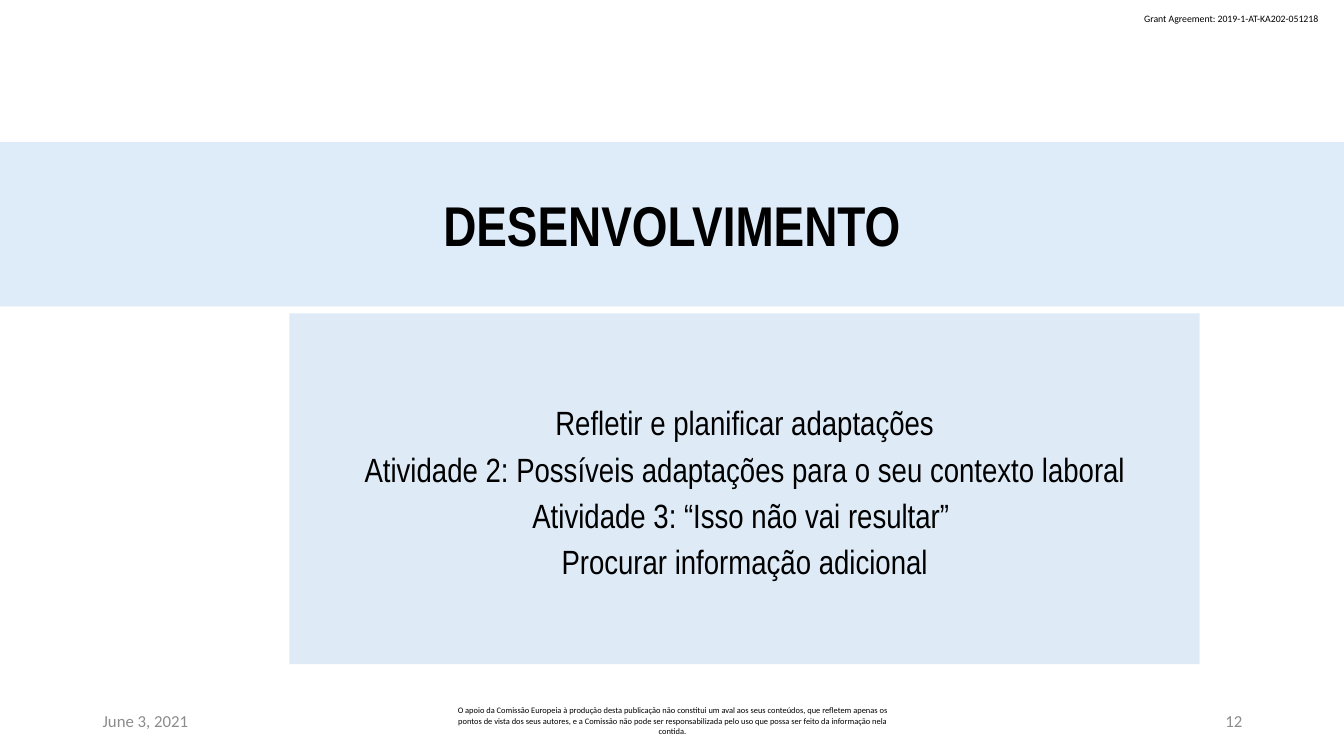
from dataclasses import dataclass
from typing import Optional

from pptx import Presentation
from pptx.dml.color import RGBColor
from pptx.enum.shapes import MSO_SHAPE
from pptx.enum.text import MSO_ANCHOR as Anchor, PP_ALIGN as Align
from pptx.util import Inches, Pt

BLACK, GREY = "000000", "8C8C8C"


@dataclass
class Block:
    left: float
    top: float
    width: float
    height: float
    text: str
    size: float
    align: Align = Align.CENTER
    color: str = BLACK
    font: str = "Calibri"
    fill: Optional[str] = None
    bold: bool = False
    spacing: Optional[float] = None
    anchor: Anchor = Anchor.MIDDLE
    wrap: bool = True


FOOTER_TOP, FOOTER_HEIGHT = 6.95, 0.4
DISCLAIMER = (
    "O apoio da Comissão Europeia à produção desta publicação não constitui um aval "
    "aos seus conteúdos, que refletem apenas os pontos de vista dos seus autores, e a "
    "Comissão não pode ser responsabilizada pelo uso que possa ser feito da informação "
    "nela contida."
)
ACTIVITIES = "\n".join([
    "Refletir e planificar adaptações",
    "Atividade 2: Possíveis adaptações para o seu contexto laboral",
    "Atividade 3: “Isso não vai resultar” ",
    "Procurar informação adicional",
])

BLOCKS = [
    # Header
    Block(11.25, 0.08, 1.97, 0.22, "Grant Agreement: 2019-1-AT-KA202-051218", 7,
          Align.LEFT, anchor=Anchor.TOP, wrap=False),
    # Footer
    Block(0.92, FOOTER_TOP, 3, FOOTER_HEIGHT, "June 3, 2021", 12, Align.LEFT, GREY),
    Block(4.42, FOOTER_TOP, 4.5, FOOTER_HEIGHT, DISCLAIMER, 6),
    Block(9.42, FOOTER_TOP, 3, FOOTER_HEIGHT, "12", 12, Align.RIGHT, GREY),
    # Title band and activities panel
    Block(0, 1.41, 13.33, 1.63, "DESENVOLVIMENTO", 40, font="Arial Narrow",
          fill="DEEBF8", bold=True),
    Block(2.87, 3.11, 9.03, 3.48, ACTIVITIES, 24, font="Arial Narrow",
          fill="DEEBF7", spacing=1.15),
]


def rgb(value: str) -> RGBColor:
    return RGBColor.from_string(value)


def draw_block(slide, block: Block) -> None:
    box = [Inches(v) for v in (block.left, block.top, block.width, block.height)]
    if block.fill:
        sp = slide.shapes.add_shape(MSO_SHAPE.RECTANGLE, *box)
        sp.shadow.inherit = False
        sp.fill.solid()
        sp.fill.fore_color.rgb = rgb(block.fill)
        sp.line.fill.background()
    else:
        sp = slide.shapes.add_textbox(*box)

    tf = sp.text_frame
    tf.word_wrap = block.wrap
    tf.vertical_anchor = block.anchor
    tf.text = block.text
    for p in tf.paragraphs:
        p.alignment = block.align
        if block.spacing:
            p.line_spacing = block.spacing
        for r in p.runs:
            r.font.name = block.font
            r.font.size = Pt(block.size)
            r.font.bold = block.bold
            r.font.color.rgb = rgb(block.color)


def main() -> None:
    prs = Presentation()
    prs.slide_width, prs.slide_height = Inches(13.33), Inches(7.5)
    slide = prs.slides.add_slide(prs.slide_layouts[6])
    for block in BLOCKS:
        draw_block(slide, block)
    prs.save("out.pptx")


if __name__ == "__main__":
    main()
